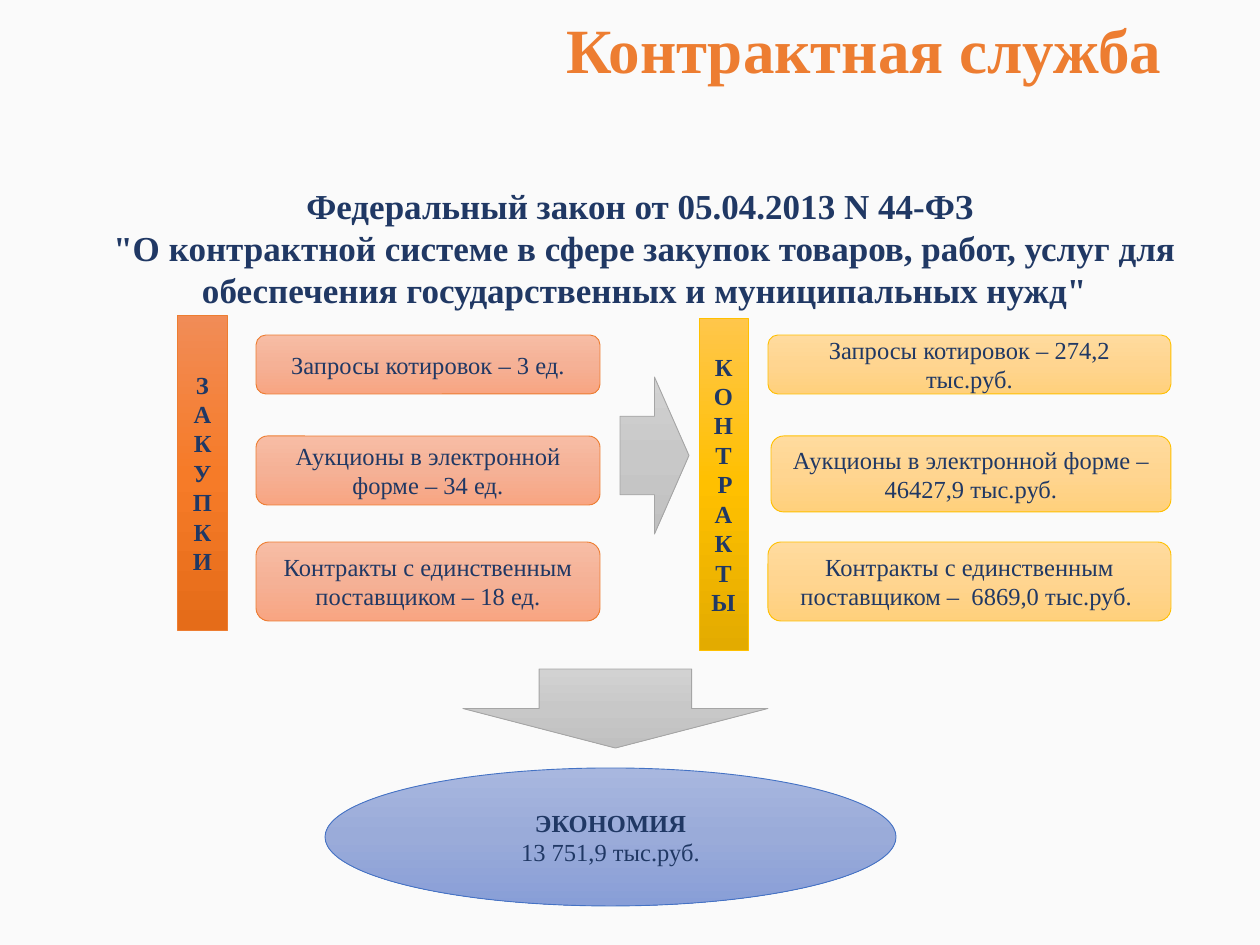
from dataclasses import dataclass

import pptx
import pptx.dml.color
import pptx.enum.shapes
import pptx.enum.text
import pptx.oxml
import pptx.oxml.ns
import pptx.util

EMU_PER_PX = 914400 / 126
FONT = "Times New Roman"
COLORS = {
    "page": "FAFAFA",
    "title": "ED7D31",
    "text": "203864",
}
# Each palette: three gradient stops from top to bottom, then the outline
PALETTES = {
    "orange": ("F18C57", "F67B28", "E56C19", "ED7D31"),
    "peach": ("F7BDA5", "F5B196", "F8A582", "ED7D31"),
    "gold": ("FFC64B", "FFC000", "E3AB00", "FFC000"),
    "sand": ("FFDB9E", "FFD590", "FFD07C", "FFC000"),
    "gray": ("D2D2D2", "C8C8C8", "C0C0C0", "A5A5A5"),
    "blue": ("A8B7DF", "9AABD9", "889ED7", "4472C4"),
}
KINDS = pptx.enum.shapes.MSO_SHAPE
ALIGN = pptx.enum.text.PP_ALIGN
MIDDLE = pptx.enum.text.MSO_ANCHOR.MIDDLE


@dataclass
class Line:
    text: str
    bold: bool = False
    size: int = 14
    color: str = "text"
    align: ALIGN = ALIGN.CENTER


@dataclass
class Block:
    kind: KINDS
    palette: str
    left: int
    top: int
    width: int
    height: int
    lines: tuple[Line, ...] = ()


def px(value: int) -> pptx.util.Emu:
    return pptx.util.Emu(round(value * EMU_PER_PX))


def rgb(value: str) -> pptx.dml.color.RGBColor:
    return pptx.dml.color.RGBColor.from_string(value)


def write_lines(frame, lines: tuple[Line, ...]) -> None:
    frame.word_wrap = True
    for index, line in enumerate(lines):
        para = frame.add_paragraph() if index else frame.paragraphs[0]
        para.alignment = line.align
        span = para.add_run()
        span.text = line.text
        span.font.name = FONT
        span.font.size = pptx.util.Pt(line.size)
        span.font.bold = line.bold
        span.font.color.rgb = rgb(COLORS[line.color])


def paint_gradient(shape, stops: tuple[str, ...]) -> None:
    """Spread the stops evenly from top to bottom."""
    shape.fill.gradient()
    shape.fill.gradient_angle = 270
    stop_list = shape._element.spPr.find(".//" + pptx.oxml.ns.qn("a:gsLst"))
    for old_stop in list(stop_list):
        stop_list.remove(old_stop)
    for index, color in enumerate(stops):
        position = index * 100000 // (len(stops) - 1)
        stop_list.append(pptx.oxml.parse_xml(
            f'<a:gs {pptx.oxml.ns.nsdecls("a")} pos="{position}">'
            f'<a:srgbClr val="{color}"/></a:gs>'))


def draw_block(page, block: Block) -> None:
    shape = page.shapes.add_shape(
        block.kind, px(block.left), px(block.top), px(block.width), px(block.height))
    shape.shadow.inherit = False
    *stops, outline = PALETTES[block.palette]
    paint_gradient(shape, tuple(stops))
    shape.line.color.rgb = rgb(outline)
    shape.line.width = pptx.util.Pt(0.5)
    shape.text_frame.vertical_anchor = MIDDLE
    write_lines(shape.text_frame, block.lines)


def cards(palette: str, rows: tuple[tuple, ...]) -> list[Block]:
    return [Block(KINDS.ROUNDED_RECTANGLE, palette, *place, (Line(text),))
            for *place, text in rows]


BLOCKS = [
    # Purchases
    Block(KINDS.FLOWCHART_PROCESS, "orange", 178, 315, 49, 315, (Line("ЗАКУПКИ", True),)),
    *cards("peach", (
        (256, 335, 344, 59, "Запросы котировок – 3 ед."),
        (256, 436, 344, 69, "Аукционы в электронной форме – 34 ед."),
        (256, 542, 344, 79, "Контракты с единственным поставщиком – 18 ед."),
    )),
    # Contracts
    Block(KINDS.FLOWCHART_PROCESS, "gold", 699, 318, 49, 332, (Line("КОНТРАКТЫ", True),)),
    *cards("sand", (
        (768, 335, 403, 59, "Запросы котировок – 274,2 тыс.руб."),
        (771, 436, 400, 76, "Аукционы в электронной форме – 46427,9 тыс.руб."),
        (768, 542, 403, 79, "Контракты с единственным поставщиком –  6869,0 тыс.руб. "),
    )),
    # Arrows and result
    Block(KINDS.RIGHT_ARROW, "gray", 620, 377, 69, 157),
    Block(KINDS.DOWN_ARROW, "gray", 463, 669, 305, 79),
    Block(KINDS.OVAL, "blue", 325, 768, 571, 138,
          (Line("ЭКОНОМИЯ", True), Line("13 751,9 тыс.руб."))),
]


def main() -> None:
    deck = pptx.Presentation()
    deck.slide_width, deck.slide_height = px(1260), px(945)
    page = deck.slides.add_slide(deck.slide_layouts[5])
    page.background.fill.solid()
    page.background.fill.fore_color.rgb = rgb(COLORS["page"])

    # Title
    title = page.shapes.title
    title.left, title.top, title.width, title.height = px(88), px(0), px(1086), px(107)
    title.text_frame.auto_size = pptx.enum.text.MSO_AUTO_SIZE.NONE
    title.text_frame.vertical_anchor = MIDDLE
    write_lines(title.text_frame,
                (Line("Контрактная служба", True, 36, "title", ALIGN.RIGHT),))
    title.text_frame.paragraphs[0].line_spacing = 0.9

    for block in BLOCKS:
        draw_block(page, block)

    # Law reference
    law = page.shapes.add_textbox(px(29), px(178), px(1231), px(140))
    write_lines(law.text_frame, (
        Line("Федеральный закон от 05.04.2013 N 44-ФЗ ", True, 20),
        Line('"О контрактной системе в сфере закупок товаров, работ, услуг для '
             'обеспечения государственных и муниципальных нужд"', True, 20),
    ))

    deck.save("out.pptx")


if __name__ == "__main__":
    main()
